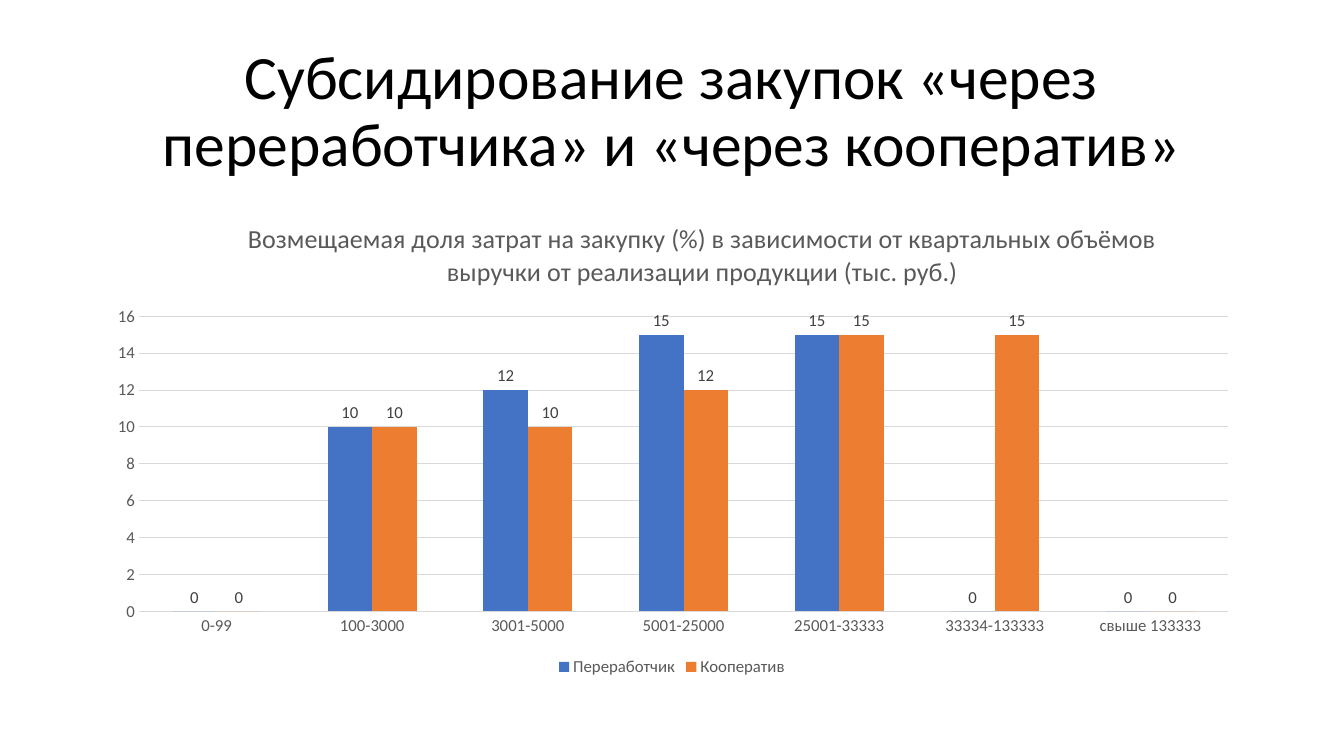
from lxml.etree import SubElement
from pptx import Presentation
from pptx.chart.data import CategoryChartData as ChartData
from pptx.dml.color import RGBColor as Rgb
from pptx.enum.chart import XL_CHART_TYPE as ChartType
from pptx.enum.chart import XL_LABEL_POSITION as LabelPos
from pptx.enum.chart import XL_LEGEND_POSITION as LegendPos
from pptx.enum.chart import XL_TICK_MARK as Tick
from pptx.enum.text import MSO_ANCHOR as Anchor
from pptx.enum.text import PP_ALIGN as Align
from pptx.oxml.ns import qn
from pptx.util import Cm, Pt

FONT = "Calibri"
COLORS = {
    "heading": "000000",
    "muted": "595959",
    "value": "404040",
    "rule": "D9D9D9",
    "processor": "4472C4",
    "cooperative": "ED7D31",
}
HEADING = "Субсидирование закупок «через переработчика» и «через кооператив»"
CAPTION = ("Возмещаемая доля затрат на закупку (%) в зависимости от квартальных "
           "объёмов выручки от реализации продукции (тыс. руб.)")
REVENUE_BANDS = ["0-99", "100-3000", "3001-5000", "5001-25000",
                 "25001-33333", "33334-133333", "свыше 133333"]
SHARES = [
    ("Переработчик", "processor", [0, 10, 12, 15, 15, 0, 0]),
    ("Кооператив", "cooperative", [0, 10, 10, 12, 15, 15, 0]),
]


def apply(target, formats):
    for name, value in formats.items():
        setattr(target, name, value)


def style_font(font, size, color):
    apply(font, {"name": FONT, "size": Pt(size), "bold": False})
    font.color.rgb = Rgb.from_string(COLORS[color])


def style_rule(line):
    line.width = Pt(0.75)
    line.color.rgb = Rgb.from_string(COLORS["rule"])


def place_in_chart(parent, index, fractions):
    """Give a chart part a fixed place, in fractions of the chart area."""
    for old in parent.findall(qn("c:layout")):
        parent.remove(old)
    layout = SubElement(parent, qn("c:layout"))
    parent.insert(index, layout)
    manual = SubElement(layout, qn("c:manualLayout"))
    for tag, value in fractions.items():
        SubElement(manual, qn(f"c:{tag}")).set("val", str(value))


def add_heading(slide, left, top, width, height):
    frame = slide.shapes.add_textbox(left, top, width, height).text_frame
    apply(frame, {"word_wrap": True, "vertical_anchor": Anchor.MIDDLE})
    line = frame.paragraphs[0]
    apply(line, {"text": HEADING, "alignment": Align.CENTER, "line_spacing": 0.9})
    style_font(line.runs[0].font, 44, "heading")


def style_axes(chart):
    bands, shares = chart.category_axis, chart.value_axis
    for axis in (bands, shares):
        apply(axis, {"major_tick_mark": Tick.NONE, "minor_tick_mark": Tick.NONE})
        style_font(axis.tick_labels.font, 12, "muted")
    style_rule(bands.format.line)
    apply(shares, {"minimum_scale": 0, "maximum_scale": 16, "major_unit": 2,
                   "has_major_gridlines": True})
    shares.format.line.fill.background()
    style_rule(shares.major_gridlines.format.line)


def add_share_chart(slide, left, top, width, height):
    data = ChartData()
    data.categories = REVENUE_BANDS
    for name, _, values in SHARES:
        data.add_series(name, values)
    chart = slide.shapes.add_chart(
        ChartType.COLUMN_CLUSTERED, left, top, width, height, data).chart
    style_font(chart.font, 10, "heading")

    # Caption above the columns
    chart.has_title = True
    caption = chart.chart_title
    caption.include_in_layout = False
    line = caption.text_frame.paragraphs[0]
    line.text = CAPTION
    style_font(line.runs[0].font, 18.6, "muted")
    place_in_chart(caption.element, 1,
                   {"xMode": "edge", "yMode": "edge", "x": 0.13, "y": 0.03})

    # Columns with their values
    columns = chart.plots[0]
    apply(columns, {"gap_width": 150, "overlap": 0, "vary_by_categories": False})
    for series, (_, color, _) in zip(columns.series, SHARES):
        series.format.fill.solid()
        series.format.fill.fore_color.rgb = Rgb.from_string(COLORS[color])
        labels = series.data_labels
        apply(labels, {"show_value": True, "position": LabelPos.OUTSIDE_END})
        style_font(labels.font, 12, "value")
    place_in_chart(chart.element.find(".//" + qn("c:plotArea")), 0,
                   {"layoutTarget": "inner", "xMode": "edge", "yMode": "edge",
                    "x": 0.04, "y": 0.24, "w": 0.94, "h": 0.615})
    style_axes(chart)

    # Legend
    chart.has_legend = True
    apply(chart.legend, {"position": LegendPos.BOTTOM, "include_in_layout": False})
    style_font(chart.legend.font, 12, "muted")


def main():
    deck = Presentation()
    apply(deck, {"slide_width": Cm(33.87), "slide_height": Cm(19.05)})
    slide = deck.slides.add_slide(deck.slide_layouts[6])
    margin, content_width = Cm(2.33), Cm(29.21)
    add_heading(slide, margin, Cm(1.01), content_width, Cm(3.68))
    add_share_chart(slide, margin, Cm(5.07), content_width, Cm(12.09))
    deck.save("out.pptx")


if __name__ == "__main__":
    main()
